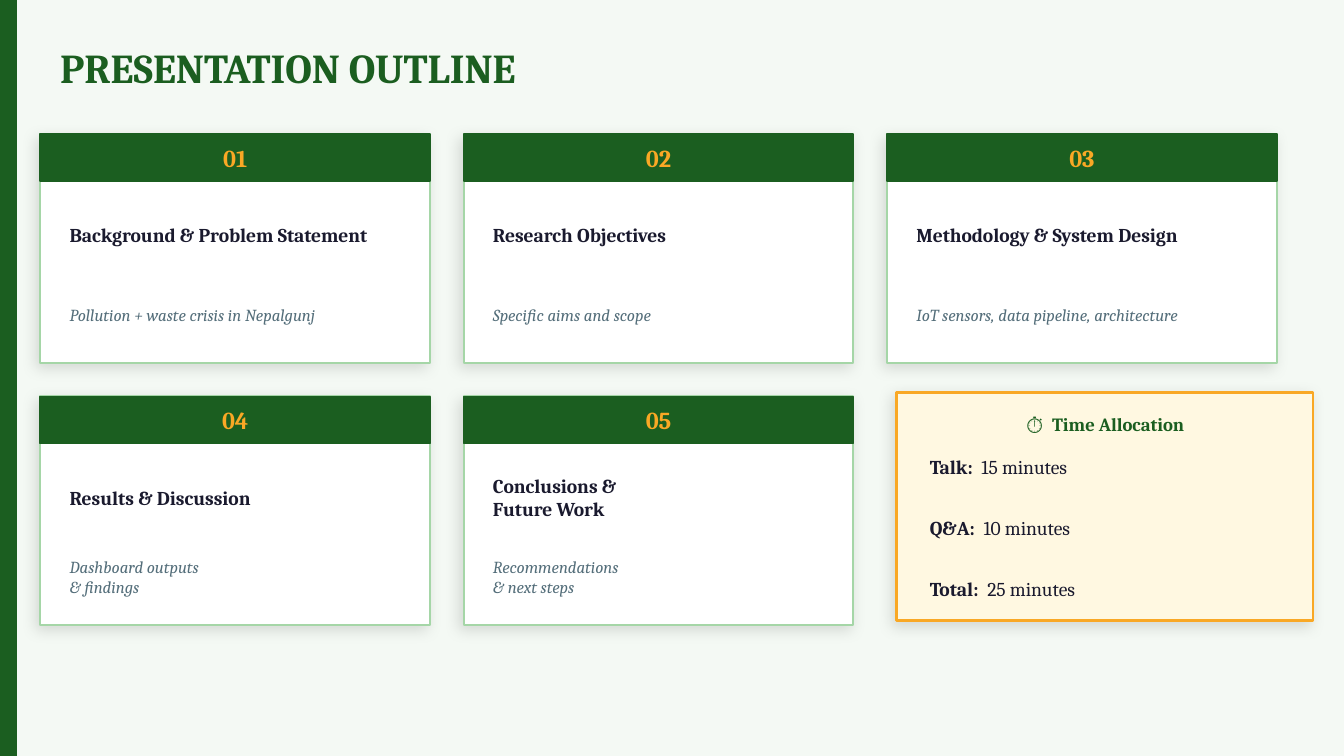
from lxml.etree import SubElement
from pptx import Presentation
from pptx.dml.color import RGBColor
from pptx.enum.shapes import MSO_SHAPE
from pptx.enum.text import MSO_ANCHOR, PP_ALIGN
from pptx.oxml.ns import qn
from pptx.util import Inches, Pt

GREEN = "1B5E20"
PALE_GREEN = "A5D6A7"
AMBER = "F9A825"
CREAM = "FFF8E1"
INK = "1A1A2E"
SLATE = "546E7A"
WHITE = "FFFFFF"
BACKGROUND = "F4F9F4"

SLIDE_WIDTH = 10
SLIDE_HEIGHT = SLIDE_WIDTH * 9 / 16
CARD_WIDTH, CARD_HEIGHT, HEADER_HEIGHT = 2.9, 1.7, 0.35
CARD_LEFT, CARD_TOP, GAP, PADDING = 0.3, 1, 0.25, 0.12
COLUMNS = 3

SECTIONS = [
    (["Background & Problem Statement"], ["Pollution + waste crisis in Nepalgunj"]),
    (["Research Objectives"], ["Specific aims and scope"]),
    (["Methodology & System Design"], ["IoT sensors, data pipeline, architecture"]),
    (["Results & Discussion"], ["Dashboard outputs", "& findings"]),
    (["Conclusions &", "Future Work"], ["Recommendations", "& next steps"]),
]
TIMES = [("Talk:", "15"), ("Q&A:", "10"), ("Total:", "25")]


def color(value):
    return RGBColor.from_string(value)


def add_shadow(shape):
    effects = shape._element.spPr.find(qn("a:effectLst"))
    shadow = SubElement(effects, qn("a:outerShdw"), blurRad=str(Pt(8)),
                        dist=str(Pt(3)), dir=str(135 * 60000),
                        algn="bl", rotWithShape="0")
    shade = SubElement(shadow, qn("a:srgbClr"), val="000000")
    SubElement(shade, qn("a:alpha"), val="12000")


def add_rectangle(slide, left, top, width, height, fill, line, weight=1, shadow=False):
    shape = slide.shapes.add_shape(MSO_SHAPE.RECTANGLE, Inches(left), Inches(top),
                                   Inches(width), Inches(height))
    shape.shadow.inherit = False
    shape.fill.solid()
    shape.fill.fore_color.rgb = color(fill)
    shape.line.color.rgb = color(line)
    shape.line.width = Pt(weight)
    if shadow:
        add_shadow(shape)
    return shape


def add_run(paragraph, text, size, text_color, bold=False, italic=False):
    run = paragraph.add_run()
    run.text = text
    run.font.name = "Cambria"
    run.font.size = Pt(size)
    run.font.color.rgb = color(text_color)
    run.font.bold = bold
    run.font.italic = italic


def next_paragraph(frame, index):
    return frame.paragraphs[0] if index == 0 else frame.add_paragraph()


def write_lines(frame, lines, size, text_color, align=PP_ALIGN.LEFT, **style):
    for index, line in enumerate(lines):
        paragraph = next_paragraph(frame, index)
        paragraph.alignment = align
        add_run(paragraph, line, size, text_color, **style)


def add_text(slide, left, top, width, height):
    box = slide.shapes.add_textbox(Inches(left), Inches(top),
                                   Inches(width), Inches(height))
    frame = box.text_frame
    frame.word_wrap = True
    frame.vertical_anchor = MSO_ANCHOR.MIDDLE
    return frame


def add_card(slide, index, heading, summary):
    row, column = divmod(index, COLUMNS)
    left = CARD_LEFT + column * (CARD_WIDTH + GAP)
    top = CARD_TOP + row * (CARD_HEIGHT + GAP)
    text_left, text_width = left + PADDING, CARD_WIDTH - 2 * PADDING

    add_rectangle(slide, left, top, CARD_WIDTH, CARD_HEIGHT, WHITE, PALE_GREEN, shadow=True)
    add_rectangle(slide, left, top, CARD_WIDTH, HEADER_HEIGHT, GREEN, GREEN)
    write_lines(add_text(slide, left, top, CARD_WIDTH, HEADER_HEIGHT),
                [f"{index + 1:02d}"], 13, AMBER, PP_ALIGN.CENTER, bold=True)
    write_lines(add_text(slide, text_left, top + 0.4, text_width, 0.7),
                heading, 10.5, INK, bold=True)
    write_lines(add_text(slide, text_left, top + 1.1, text_width, 0.48),
                summary, 9, SLATE, italic=True)


def add_time_panel(slide, left, top, width):
    add_rectangle(slide, left, top, width, CARD_HEIGHT, CREAM, AMBER, 1.5, shadow=True)
    write_lines(add_text(slide, left, top + 0.06, width, 0.35),
                ["⏱  Time Allocation"], 10, GREEN, PP_ALIGN.CENTER, bold=True)

    frame = add_text(slide, left + 0.15, top + 0.43, width - 0.3, 1.1)
    for index, (label, minutes) in enumerate(TIMES):
        paragraph = next_paragraph(frame, index)
        paragraph.line_spacing = 1.3
        if index:
            paragraph.space_before = Pt(16.4)
        add_run(paragraph, label, 10.5, INK, bold=True)
        add_run(paragraph, f"  {minutes} minutes", 10.5, INK)


def main():
    presentation = Presentation()
    presentation.slide_width = Inches(SLIDE_WIDTH)
    presentation.slide_height = Inches(SLIDE_HEIGHT)
    slide = presentation.slides.add_slide(presentation.slide_layouts[6])
    slide.background.fill.solid()
    slide.background.fill.fore_color.rgb = color(BACKGROUND)

    add_rectangle(slide, 0, 0, 0.12, SLIDE_HEIGHT, GREEN, GREEN)
    write_lines(add_text(slide, 0.35, 0.25, 9, 0.5),
                ["PRESENTATION OUTLINE"], 22, GREEN, bold=True)
    for index, (heading, summary) in enumerate(SECTIONS):
        add_card(slide, index, heading, summary)
    add_time_panel(slide, 6.67, 2.92, 3.1)

    presentation.save("out.pptx")


if __name__ == "__main__":
    main()
